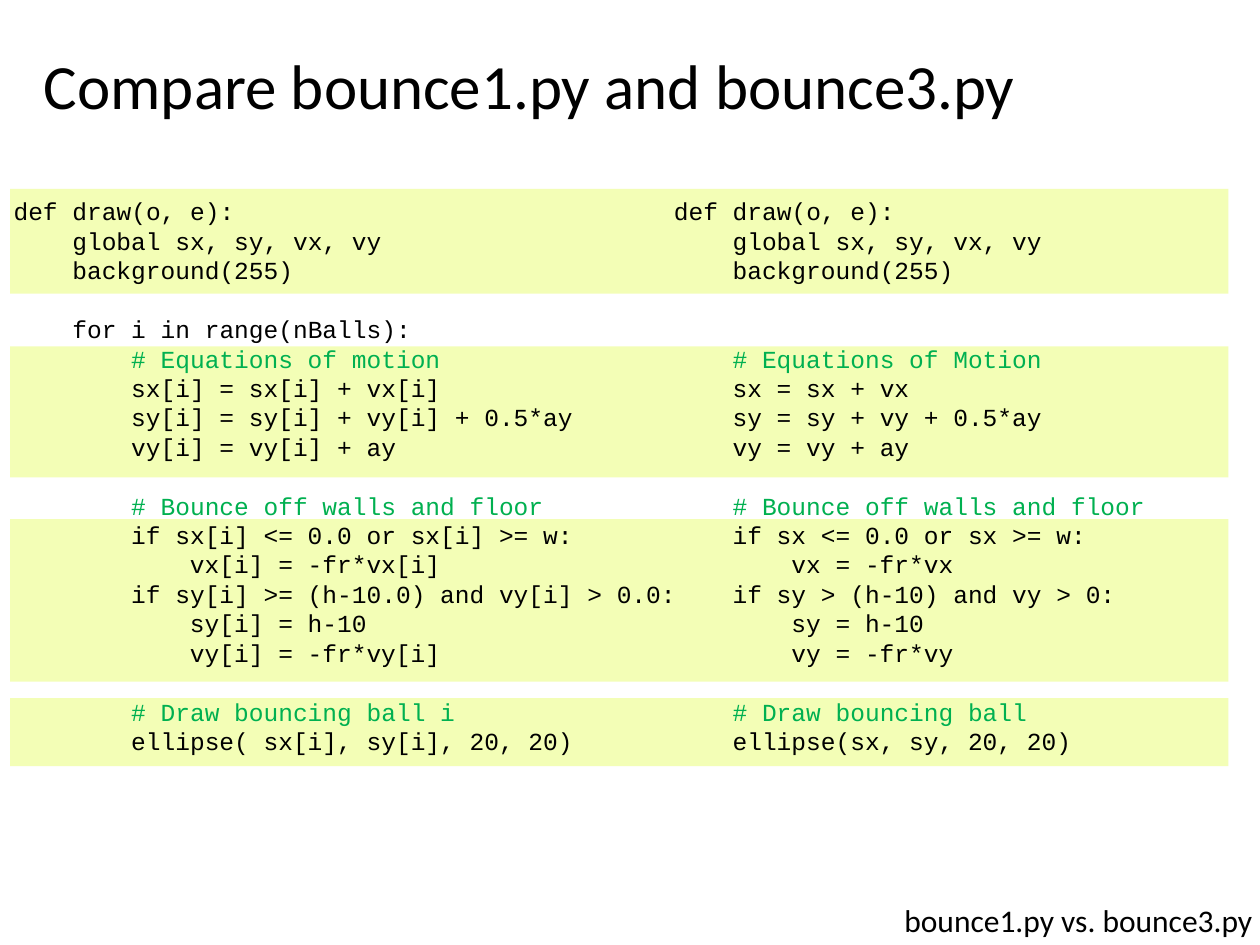
from lxml import etree
from pptx import Presentation
from pptx.dml.color import RGBColor
from pptx.enum import shapes, text
from pptx.oxml.ns import qn
from pptx.util import Pt

TITLE = "Compare bounce1.py and bounce3.py"
FOOTER = "bounce1.py vs. bounce3.py"

# Each line of code: (indent level, blank lines before it, wording)
MANY_BALLS = [
    (0, 0, "def draw(o, e):"),
    (1, 0, "global sx, sy, vx, vy"),
    (1, 0, "background(255)"),
    (1, 1, "for i in range(nBalls):"),
    (2, 0, "# Equations of motion"),
    (2, 0, "sx[i] = sx[i] + vx[i]"),
    (2, 0, "sy[i] = sy[i] + vy[i] + 0.5*ay"),
    (2, 0, "vy[i] = vy[i] + ay"),
    (2, 1, "# Bounce off walls and floor"),
    (2, 0, "if sx[i] <= 0.0 or sx[i] >= w:"),
    (3, 0, "vx[i] = -fr*vx[i]"),
    (2, 0, "if sy[i] >= (h-10.0) and vy[i] > 0.0:"),
    (3, 0, "sy[i] = h-10"),
    (3, 0, "vy[i] = -fr*vy[i]"),
    (2, 1, "# Draw bouncing ball i"),
    (2, 0, "ellipse( sx[i], sy[i], 20, 20)"),
]
ONE_BALL = [
    (0, 0, "def draw(o, e):"),
    (1, 0, "global sx, sy, vx, vy"),
    (1, 0, "background(255)"),
    (1, 2, "# Equations of Motion"),
    (1, 0, "sx = sx + vx"),
    (1, 0, "sy = sy + vy + 0.5*ay"),
    (1, 0, "vy = vy + ay"),
    (1, 1, "# Bounce off walls and floor"),
    (1, 0, "if sx <= 0.0 or sx >= w:"),
    (2, 0, "vx = -fr*vx"),
    (1, 0, "if sy > (h-10) and vy > 0:"),
    (2, 0, "sy = h-10"),
    (2, 0, "vy = -fr*vy"),
    (1, 1, "# Draw bouncing ball"),
    (1, 0, "ellipse(sx, sy, 20, 20)"),
]
BANDS = [(398.9, 38.9), (296.6, 92.9), (108, 59.8), (198, 74.9)]  # top, height
BAND_LEFT, BAND_WIDTH = 5.8, 696.2
CODE_TOP, CODE_HEIGHT = 108.7, 329.8

THEME = {
    "ink": "000000", "comment": "00B050", "band": "DAFC10", "band_alpha": 30,
    "plain_font": "Calibri", "code_font": "Courier New",
    "title_size": 36, "footer_size": 18, "code_size": 14,
    "line_height": 16.82, "indent": 33.6,  # indent: four characters of code
}


def add_band(page, top, height):
    band = page.shapes.add_shape(shapes.MSO_SHAPE.RECTANGLE, Pt(BAND_LEFT), Pt(top),
                                 Pt(BAND_WIDTH), Pt(height))
    band.shadow.inherit = False
    band.line.fill.background()
    band.fill.solid()
    band.fill.fore_color.rgb = RGBColor.from_string(THEME["band"])
    color = band.element.spPr.find(".//" + qn("a:srgbClr"))
    etree.SubElement(color, qn("a:alpha"), val=str(THEME["band_alpha"] * 1000))


def add_box(page, left, top, width, height, wrap):
    frame = page.shapes.add_textbox(Pt(left), Pt(top), Pt(width), Pt(height)).text_frame
    frame.word_wrap = wrap
    frame.auto_size = text.MSO_AUTO_SIZE.SHAPE_TO_FIT_TEXT
    return frame


def write(para, wording, *, size, font, color=THEME["ink"], align=text.PP_ALIGN.LEFT):
    para.alignment = align
    span = para.add_run()
    span.text = wording
    span.font.size = Pt(size)
    span.font.name = font
    span.font.color.rgb = RGBColor.from_string(color)


def add_code(page, lines, left, width):
    """Set code lines with real indents, and blank lines as space before."""
    frame = add_box(page, left, CODE_TOP, width, CODE_HEIGHT, wrap=True)
    for number, (level, blanks, wording) in enumerate(lines):
        para = frame.add_paragraph() if number else frame.paragraphs[0]
        para.line_spacing = Pt(THEME["line_height"])
        para.space_before = Pt(blanks * THEME["line_height"])
        properties = para._p.get_or_add_pPr()
        properties.set("marL", str(Pt(level * THEME["indent"])))
        properties.set("indent", "0")
        color = THEME["comment" if wording.startswith("#") else "ink"]
        write(para, wording, size=THEME["code_size"], font=THEME["code_font"], color=color)


def main():
    deck = Presentation()
    deck.slide_width, deck.slide_height = Pt(720), Pt(540)
    page = deck.slides.add_slide(deck.slide_layouts[6])

    for top, height in BANDS:
        add_band(page, top, height)

    footer = add_box(page, 506.9, 511.2, 216, 28.8, wrap=False)
    write(footer.paragraphs[0], FOOTER, size=THEME["footer_size"],
          font=THEME["plain_font"], align=text.PP_ALIGN.RIGHT)

    add_code(page, MANY_BALLS, left=0.7, width=468)
    add_code(page, ONE_BALL, left=378, width=300.2)

    title = add_box(page, 18, 23, 574.6, 51.1, wrap=False)
    write(title.paragraphs[0], TITLE, size=THEME["title_size"], font=THEME["plain_font"])

    deck.save("out.pptx")


if __name__ == "__main__":
    main()
